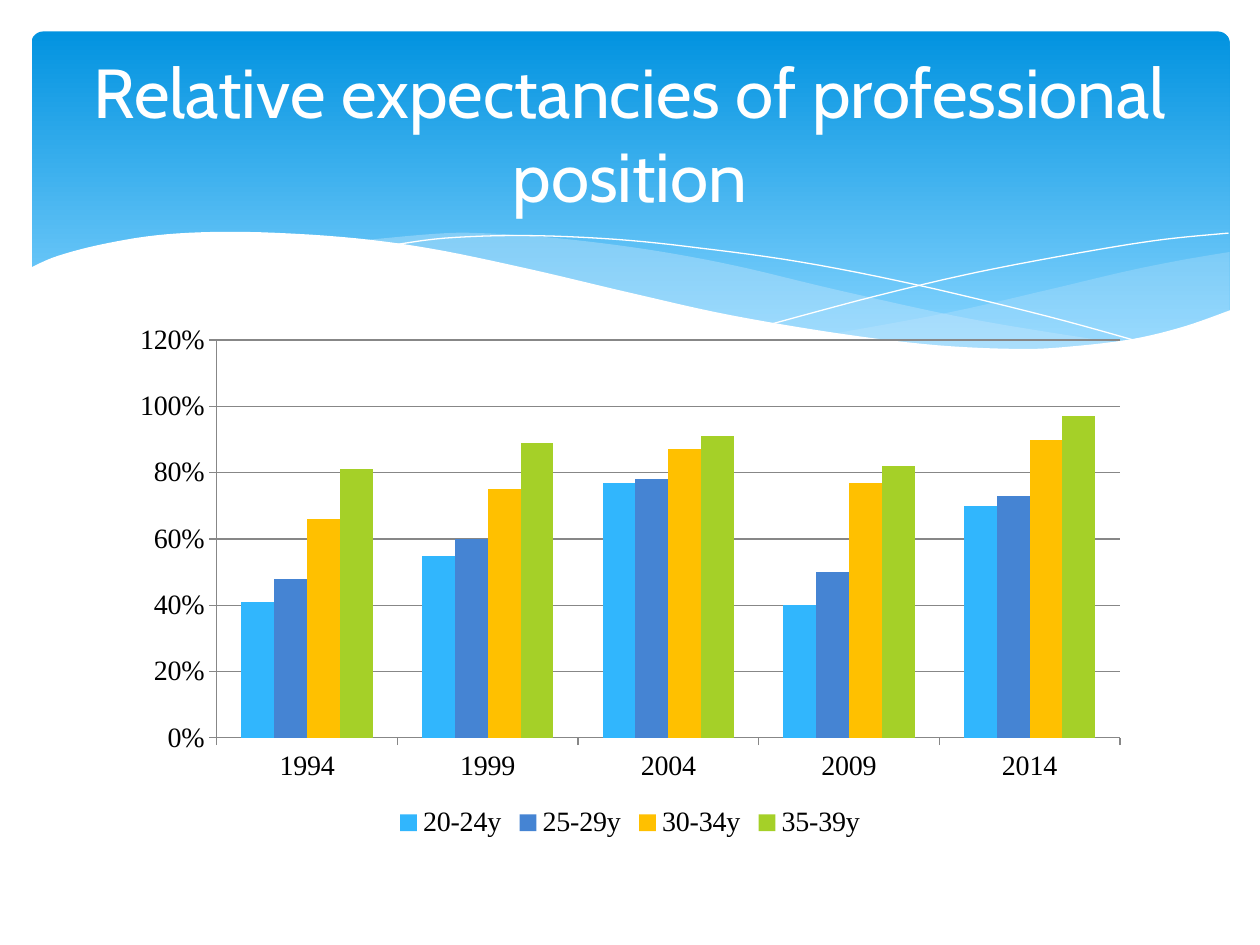
from lxml.etree import SubElement
from pptx import Presentation
from pptx.chart.data import CategoryChartData
from pptx.dml.color import RGBColor
from pptx.enum.chart import XL_CHART_TYPE, XL_LEGEND_POSITION, XL_TICK_MARK
from pptx.enum.shapes import MSO_SHAPE
from pptx.enum.text import MSO_ANCHOR, MSO_AUTO_SIZE, PP_ALIGN
from pptx.oxml.ns import qn
from pptx.util import Pt

COLORS = {
    "white": "FFFFFF", "black": "000000", "axis": "878787",
    "banner top": "0293E0", "banner bottom": "83D3FE", "wave": "C6E7FC",
    "20-24y": "31B6FD", "25-29y": "4584D3", "30-34y": "FFC000", "35-39y": "A5D028",
}
YEARS = ["1994", "1999", "2004", "2009", "2014"]
EXPECTANCIES = {
    "20-24y": [0.41, 0.55, 0.77, 0.40, 0.70],
    "25-29y": [0.48, 0.60, 0.78, 0.50, 0.73],
    "30-34y": [0.66, 0.75, 0.87, 0.77, 0.90],
    "35-39y": [0.81, 0.89, 0.91, 0.82, 0.97],
}

RIGHT_CREST = [(702.7, 144), (673.2, 149), (641.5, 155.5), (599, 165.6), (542.2, 178.6), (475.9, 190.8)]
RIGHT_TROUGH = [(475.9, 190.8), (507.6, 195.1), (545, 198.7), (586.1, 200.2), (627.8, 197.3),
                (663.1, 190.8), (702.7, 177.8)]
MIDDLE_CREST = [(205.9, 137.5), (247.7, 133.7), (273.6, 133.2), (318.2, 136.1), (370.1, 142.6),
                (420.5, 151.9), (481, 166.3), (558, 182.9), (643, 196.6)]
MIDDLE_TROUGH = [(643, 196.6), (617, 199.4), (581, 200.2), (538.6, 198.7), (489.6, 193), (432.7, 183.6),
                 (381.6, 172.8), (323.3, 159.8), (275.8, 149), (232.6, 141.1), (205.9, 137.5)]
FALLING_LINE = [(222.5, 140.4), (254.2, 136.1), (299.5, 134.6), (352.1, 136.8), (400.3, 141.8),
                (457.9, 149.8), (523.4, 162.7), (598.3, 180.7), (653, 195.8)]
RISING_LINE = [(441.4, 185), (500.4, 169.2), (558.7, 155.5), (623.5, 143.3), (665.3, 136.8), (702, 133.2)]
BANNER_EDGE = [(703.4, 177.1), (676.8, 186.5), (647.3, 193.7), (612, 198), (582.5, 199.4), (535.7, 197.3),
               (481, 190.8), (416.9, 180), (362.2, 167.8), (301, 153.4), (244.8, 141.8), (195.1, 135.4),
               (139, 132.5), (95, 133.9), (61.2, 139), (33.1, 146.2), (16.6, 153.4)]
BANNER_FOOT = [(16.6, 236.9), (703.4, 236.9)]


def rgb(name):
    return RGBColor.from_string(COLORS[name])


def smooth(knots, steps=6):
    padded = [knots[0], *knots, knots[-1]]
    curve = []
    for a, b, c, d in zip(padded, padded[1:], padded[2:], padded[3:]):
        for t in (step / steps for step in range(steps)):
            curve.append(tuple(
                q + t / 2 * (r - p + t * (2 * p - 5 * q + 4 * r - s + t * (3 * (q - r) + s - p)))
                for p, q, r, s in zip(a, b, c, d)))
    return curve + [knots[-1]]


class Deck:
    title_font = "Cabin"
    chart_font = "Times New Roman"
    chart_size = Pt(16)

    def __init__(self):
        self.presentation = Presentation()
        self.presentation.slide_width, self.presentation.slide_height = Pt(720), Pt(540)
        self.slide = self.presentation.slides.add_slide(self.presentation.slide_layouts[5])

    def banner(self, left, top, width, height):
        panel = self.slide.shapes.add_shape(
            MSO_SHAPE.ROUNDED_RECTANGLE, Pt(left), Pt(top), Pt(width), Pt(height))
        panel.adjustments[0] = 0.034
        panel.shadow.inherit = False
        panel.line.fill.background()
        panel.fill.gradient()
        panel.fill.gradient_angle = 270
        for stop, name, position in zip(
                panel.fill.gradient_stops, ("banner top", "banner bottom"), (0, 0.9)):
            stop.color.rgb, stop.position = rgb(name), position

    def outline(self, points, closed):
        start, *rest = [(Pt(x), Pt(y)) for x, y in points]
        builder = self.slide.shapes.build_freeform(*start)
        builder.add_line_segments(rest, close=closed)
        figure = builder.convert_to_shape()
        figure.shadow.inherit = False
        return figure

    def wave(self, points, color, opacity=100):
        water = self.outline(points, True)
        water.line.fill.background()
        water.fill.solid()
        water.fill.fore_color.rgb = rgb(color)
        if opacity < 100:
            tint = water.fill._xPr.find(qn("a:solidFill"))[0]
            SubElement(tint, qn("a:alpha")).set("val", str(opacity * 1000))

    def ripple(self, knots):
        thread = self.outline(smooth(knots), False)
        thread.fill.background()
        thread.line.color.rgb = rgb("white")
        thread.line.width = Pt(0)

    def title(self, wording, left, top, width, height):
        heading = self.slide.shapes.title
        heading.left, heading.top, heading.width, heading.height = map(Pt, (left, top, width, height))
        self.slide.shapes._spTree.append(heading._element)
        frame = heading.text_frame
        frame.text = wording
        frame.word_wrap = True
        frame.auto_size = MSO_AUTO_SIZE.NONE
        frame.vertical_anchor = MSO_ANCHOR.MIDDLE
        frame.paragraphs[0].alignment = PP_ALIGN.CENTER
        font = frame.paragraphs[0].runs[0].font
        font.name, font.size, font.color.rgb = self.title_font, Pt(39.6), rgb("white")

    def column_chart(self, categories, groups, left, top, width, height):
        data = CategoryChartData(number_format="0%")
        data.categories = categories
        for name, values in groups.items():
            data.add_series(name, values)
        chart = self.slide.shapes.add_chart(
            XL_CHART_TYPE.COLUMN_CLUSTERED, Pt(left), Pt(top), Pt(width), Pt(height), data).chart
        chart.has_title = False
        chart.font.name, chart.font.size = self.chart_font, self.chart_size
        chart.font.color.rgb = rgb("black")
        chart.has_legend = True
        chart.legend.position = XL_LEGEND_POSITION.BOTTOM
        chart.legend.include_in_layout = False
        plot = chart.plots[0]
        plot.gap_width, plot.overlap, plot.vary_by_categories = 150, 0, False
        for series in plot.series:
            series.format.fill.solid()
            series.format.fill.fore_color.rgb = rgb(series.name)
            series.invert_if_negative = False
        scale = chart.value_axis
        scale.minimum_scale, scale.maximum_scale, scale.major_unit = 0, 1.2, 0.2
        scale.has_major_gridlines = True
        scale.tick_labels.number_format = "0%"
        scale.tick_labels.number_format_is_linked = False
        for axis in (chart.category_axis, scale):
            axis.major_tick_mark = XL_TICK_MARK.OUTSIDE
            axis.format.line.color.rgb = rgb("axis")
        scale.major_gridlines.format.line.color.rgb = rgb("axis")


def main():
    deck = Deck()
    deck.banner(18, 18, 684.7, 194.4)
    deck.wave(smooth(RIGHT_CREST) + smooth(RIGHT_TROUGH), "wave", 29)
    deck.wave(smooth(MIDDLE_CREST) + smooth(MIDDLE_TROUGH), "wave", 40)
    deck.ripple(FALLING_LINE)
    deck.ripple(RISING_LINE)
    deck.wave(smooth(BANNER_EDGE) + BANNER_FOOT, "white")
    deck.title("Relative expectancies of professional position", 36, 26.6, 648, 98.6)
    deck.column_chart(YEARS, EXPECTANCIES, 68.4, 179.3, 583.2, 303.1)
    deck.presentation.save("out.pptx")


if __name__ == "__main__":
    main()
